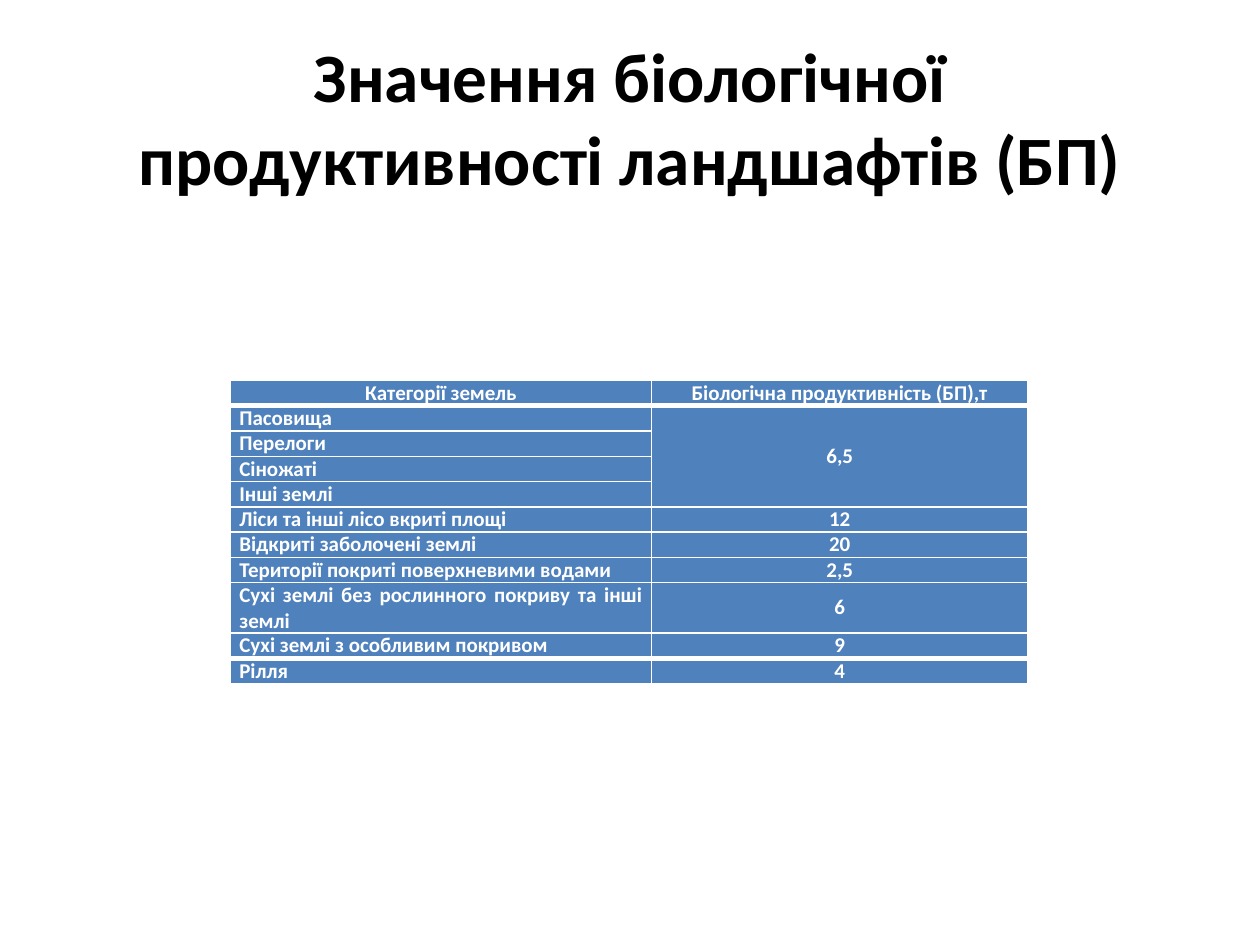
from lxml import etree
from pptx import Presentation
from pptx.dml.color import RGBColor
from pptx.enum import text
from pptx.oxml.ns import qn
from pptx.util import Inches, Pt

COLORS = {"ink": "000000", "white": "FFFFFF", "cell": "4F81BD"}
CENTER, JUSTIFY = text.PP_ALIGN.CENTER, text.PP_ALIGN.JUSTIFY


def write(tf, words, size=12, color="white", align=CENTER):
    p = tf.paragraphs[0]
    p.alignment = align
    r = p.add_run()
    r.text = words
    r.font.name, r.font.size, r.font.bold = "Calibri", Pt(size), True
    r.font.color.rgb = RGBColor.from_string(COLORS[color])


def add_border(cell, side, width):
    ln = etree.SubElement(cell._tc.get_or_add_tcPr(), qn(f"a:ln{side}"), w=str(Pt(width)))
    fill = etree.SubElement(ln, qn("a:solidFill"))
    etree.SubElement(fill, qn("a:srgbClr"), val=COLORS["white"])


prs = Presentation()
prs.slide_width, prs.slide_height = Inches(10), Inches(7.5)
W, H = prs.slide_width, prs.slide_height
s = prs.slides.add_slide(prs.slide_layouts[6])

# Title
sp = s.shapes.add_textbox(int(W * 0.05), int(H * 0.04), int(W * 0.9), Inches(1.25))
tf = sp.text_frame
tf.word_wrap = True
tf.vertical_anchor = text.MSO_ANCHOR.MIDDLE
write(tf, "Значення біологічної продуктивності ландшафтів (БП)", size=39.6, color="ink")

# Land categories and their productivity
rows = [
    ("Категорії земель", "Біологічна продуктивність (БП),т"),
    ("Пасовища", "6,5"),
    ("Перелоги", ""),
    ("Сіножаті", ""),
    ("Інші землі", ""),
    ("Ліси та інші лісо вкриті площі", "12"),
    ("Відкриті заболочені землі", "20"),
    ("Території покриті поверхневими водами", "2,5"),
    ("Сухі землі без рослинного покриву та інші землі", "6"),
    ("Сухі землі з особливим покривом", "9"),
    ("Рілля", "4"),
]
TWO_LINE_ROW, LAST = 8, len(rows) - 1
ROW_H = Inches(0.2)
col_widths = [Inches(3.34), Inches(2.99)]
table = s.shapes.add_table(len(rows), 2, Inches(1.83), Inches(3.02),
                           sum(col_widths), ROW_H * (len(rows) + 1)).table
for column, width in zip(table.columns, col_widths):
    column.width = width

for i, row in enumerate(rows):
    table.rows[i].height = ROW_H * (2 if i == TWO_LINE_ROW else 1)
    for j, words in enumerate(row):
        cell = table.cell(i, j)
        cell.margin_left = cell.margin_right = Inches(0.07)
        cell.margin_top = cell.margin_bottom = 0
        if i and j:
            cell.vertical_anchor = text.MSO_ANCHOR.MIDDLE
        # Heavy rules under the header and above the last row
        top = 3 if i in (1, LAST) else 1
        bottom = 3 if i in (0, LAST - 1) else 1
        for side, width in zip("LRTB", (1, 1, top, bottom)):
            add_border(cell, side, width)
        cell.fill.solid()
        cell.fill.fore_color.rgb = RGBColor.from_string(COLORS["cell"])
        if words:
            write(cell.text_frame, words, align=JUSTIFY if i and not j else CENTER)
        else:
            cell.text_frame.paragraphs[0].font.size = Pt(12)

# One value shared by four categories
table.cell(1, 1).merge(table.cell(4, 1))

prs.save("out.pptx")
